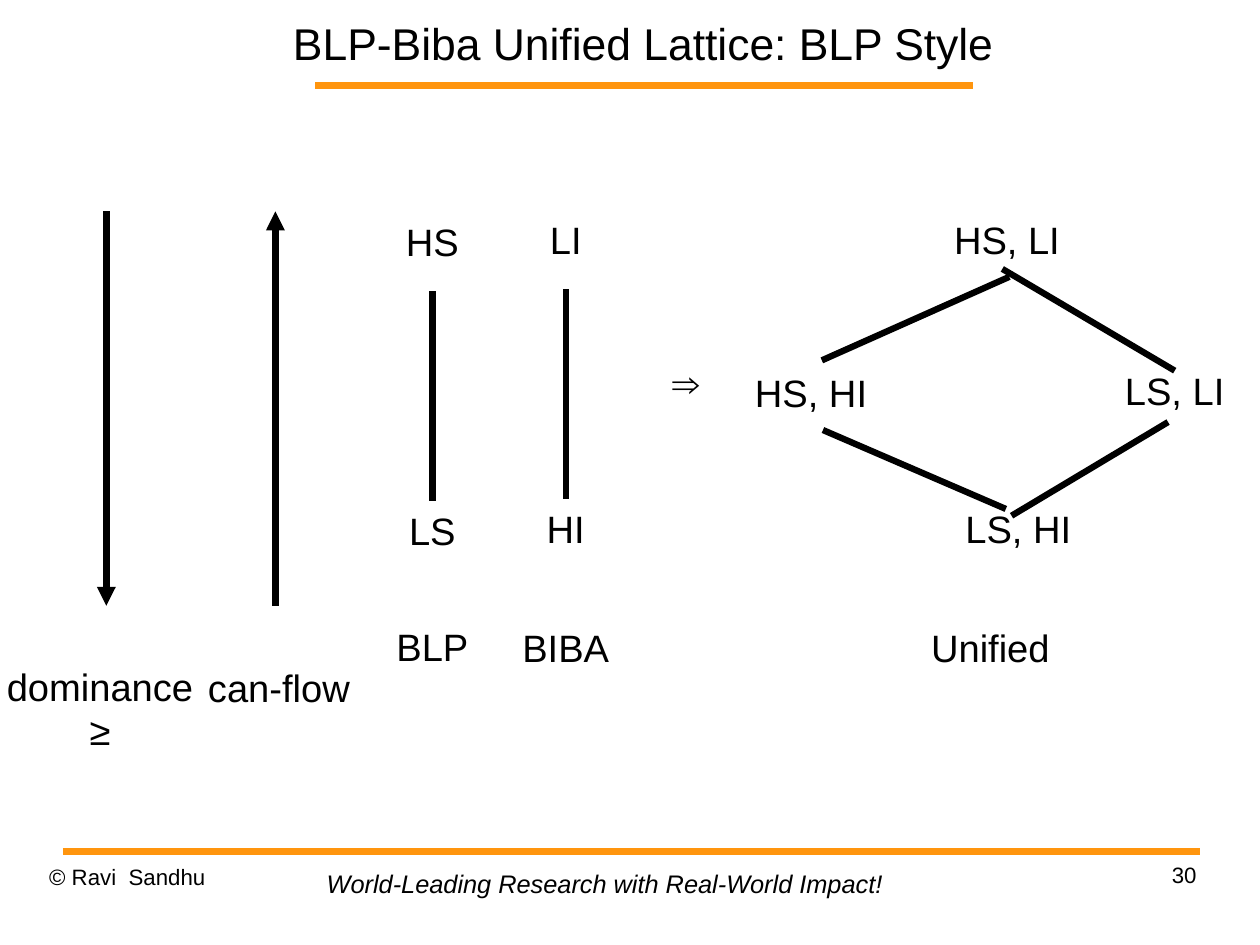
import dataclasses

import lxml.etree
import pptx
import pptx.dml.color
import pptx.enum.shapes
import pptx.enum.text
import pptx.oxml.ns
import pptx.util

Pt = pptx.util.Pt
Align = pptx.enum.text.PP_ALIGN
Anchor = pptx.enum.text.MSO_ANCHOR
qn = pptx.oxml.ns.qn


@dataclasses.dataclass(frozen=True)
class Theme:
    font: str = "Arial"
    ink: str = "000000"
    accent: str = "FF950E"
    title: float = 28
    label: float = 24
    slogan: float = 16
    footer: float = 14
    stroke: float = 4
    rule: float = 4.3


@dataclasses.dataclass(frozen=True)
class Box:
    left: float
    top: float
    width: float
    height: float

    def inner(self, left, top, width, height):
        return Box(self.left + left, self.top + top, width, height)


THEME = Theme()
LABEL_HEIGHT = 33
LABEL_INSETS = (5, 2)


def write(shape, text, size, align, insets=(0, 0), spacing=1.0, wrap=True, italic=False):
    frame = shape.text_frame
    frame.text = text
    frame.word_wrap = wrap
    frame.auto_size = pptx.enum.text.MSO_AUTO_SIZE.NONE
    frame.margin_left = frame.margin_right = Pt(insets[0])
    frame.margin_top = frame.margin_bottom = Pt(insets[1])
    for para in frame.paragraphs:
        para.alignment = align
        para.line_spacing = spacing
        for span in para.runs:
            span.font.name = THEME.font
            span.font.size = Pt(size)
            span.font.italic = italic
            span.font.color.rgb = pptx.dml.color.RGBColor.from_string(THEME.ink)


def add_text(page, box, text, size, align, **style):
    shape = page.shapes.add_textbox(Pt(box.left), Pt(box.top), Pt(box.width), Pt(box.height))
    write(shape, text, size, align, **style)
    return shape


def add_label(page, box, text, align=Align.CENTER, spacing=0.87):
    return add_text(page, box, text, THEME.label, align,
                    insets=LABEL_INSETS, spacing=spacing, wrap=False)


def add_line(page, box, start, end, color=THEME.ink, width=THEME.stroke, arrow=False):
    line = page.shapes.add_connector(
        pptx.enum.shapes.MSO_CONNECTOR.STRAIGHT,
        Pt(box.left + start[0]), Pt(box.top + start[1]),
        Pt(box.left + end[0]), Pt(box.top + end[1]))
    line.line.color.rgb = pptx.dml.color.RGBColor.from_string(color)
    line.line.width = Pt(width)
    if arrow:
        lxml.etree.SubElement(line.line._get_or_add_ln(), qn("a:tailEnd"), type="triangle")
    lxml.etree.SubElement(line._element.spPr, qn("a:effectLst"))
    return line


def add_heading(page, box, text):
    title = page.shapes.title
    title.left, title.top = Pt(box.left), Pt(box.top)
    title.width, title.height = Pt(box.width), Pt(box.height)
    write(title, text, THEME.title, Align.CENTER)
    title.text_frame.vertical_anchor = Anchor.MIDDLE
    add_line(page, box, (25.2, box.height), (439.2, box.height), THEME.accent, THEME.rule)


def add_footer(page, box):
    add_line(page, box, (8.6, 0), (box.width + 2.2, 0), THEME.accent, THEME.rule)
    add_text(page, box.inner(0, 7.2, 185, 41), "© Ravi  Sandhu",
             THEME.footer, Align.LEFT, spacing=1.01)
    add_text(page, box.inner(167.7, 7.2, 366, 26.6),
             "World-Leading Research with Real-World Impact!",
             THEME.slogan, Align.LEFT, insets=(7.2, 3.6), wrap=False, italic=True)
    add_text(page, box.inner(box.width - 185, 5.8, 185, 41), "30",
             THEME.footer, Align.RIGHT, spacing=1.01)


def add_directions(page, box):
    length = 248.4
    dominance, flow = 67, 173.5
    add_line(page, box, (dominance, 0), (dominance, length), arrow=True)
    add_line(page, box, (flow, length), (flow, 0), arrow=True)
    add_label(page, box.inner(0, 284.4, 126, 64), "dominance\n≥", spacing=0.97)
    add_label(page, box.inner(126, 287.3, 111.6, LABEL_HEIGHT), "can-flow", Align.LEFT)


def add_chain(page, box, high, low, name):
    middle = box.width / 2
    name_top = box.height - LABEL_HEIGHT
    for text, top in ((high, 0), (low, 182.2), (name, name_top)):
        add_label(page, box.inner(0, top, box.width, LABEL_HEIGHT), text)
    add_line(page, box, (middle, 44), (middle, 176))


def add_lattice(page, box):
    nodes = {}
    for text, left, top, width in (
        ("HS, LI", 125.3, 0, 82),
        ("HS, HI", 0.4, 96.7, 85),
        ("LS, LI", 232.4, 95.3, 79.2),
        ("LS, HI", 132.5, 182.2, 82),
        ("Unified", 113, box.height - LABEL_HEIGHT, 85.7),
    ):
        nodes[text] = add_label(page, box.inner(left, top, width, LABEL_HEIGHT), text)
    for start, end in (
        ((167.8, 36.2), (49.7, 88.8)),
        ((50.4, 132.7), (165.6, 182.4)),
        ((169.2, 186.7), (267.8, 127.7)),
    ):
        add_line(page, box, start, end)
    upper_right = add_line(page, box, (163.4, 31.2), (272, 95.3))
    upper_right.end_connect(nodes["LS, LI"], 0)


def main():
    deck = pptx.Presentation()
    deck.slide_width, deck.slide_height = Pt(793.7), Pt(595.28)
    page = deck.slides.add_slide(deck.slide_layouts.get_by_name("Title Only"))
    add_heading(page, Box(173.5, 0, 463, 54), "BLP-Biba Unified Lattice: BLP Style")
    add_directions(page, Box(0, 133.2, 238, 348))
    add_chain(page, Box(236.4, 139.5, 72, 288), "HS", "LS", "BLP")
    add_chain(page, Box(320.4, 138.2, 72, 290), "LI", "HI", "BIBA")
    add_label(page, Box(420, 222.3, 24.5, 38.9), "⇒", spacing=1.08)
    add_lattice(page, Box(468, 138.2, 312, 290))
    add_footer(page, Box(31, 536.4, 722.8, 48))
    deck.save("out.pptx")


if __name__ == "__main__":
    main()
